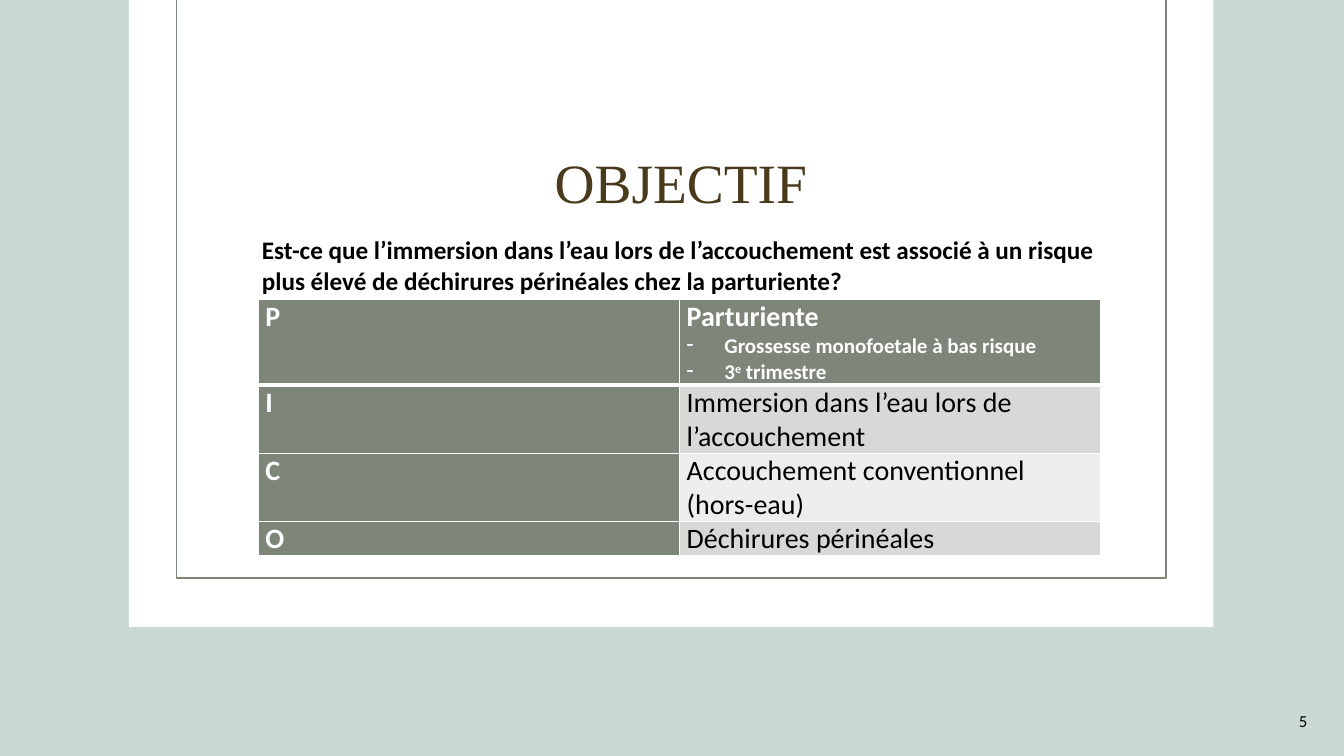
from lxml import etree
from pptx import Presentation
from pptx.dml.color import RGBColor
from pptx.enum.shapes import MSO_SHAPE
from pptx.enum.text import MSO_ANCHOR, PP_ALIGN
from pptx.oxml.ns import qn
from pptx.util import Cm, Pt

RECT = MSO_SHAPE.RECTANGLE
TOP, MIDDLE = MSO_ANCHOR.TOP, MSO_ANCHOR.MIDDLE
LEFT, CENTER, RIGHT = PP_ALIGN.LEFT, PP_ALIGN.CENTER, PP_ALIGN.RIGHT

COLORS = {
    "background": "CAD8D6",
    "white": "FFFFFF",
    "sage": "7E8679",
    "brown": "4A3A1C",
    "black": "000000",
    "band_dark": "D8D9D7",
    "band_light": "ECEDEC",
}


class SlideBuilder:
    """Holds the style and the current slide."""

    def __init__(self, prs, font="Calibri"):
        self.font = font
        self.s = prs.slides.add_slide(prs.slide_layouts[6])
        fill = self.s.background.fill
        fill.solid()
        fill.fore_color.rgb = self.rgb("background")

    def rgb(self, name):
        return RGBColor.from_string(COLORS[name])

    def style(self, p, size, color, bold=False, font=None):
        p.font.name = font or self.font
        p.font.size = Pt(size)
        p.font.bold = bold
        p.font.color.rgb = self.rgb(color)

    def rect(self, box, fill=None, line=None):
        sp = self.s.shapes.add_shape(RECT, *map(Cm, box))
        sp.shadow.inherit = False
        if fill:
            sp.fill.solid()
            sp.fill.fore_color.rgb = self.rgb(fill)
        else:
            sp.fill.background()
        if line:
            sp.line.color.rgb = self.rgb(line)
            sp.line.width = Pt(1)
        else:
            sp.line.fill.background()

    def text(self, box, text, size, color, align=LEFT, anchor=TOP,
             spacing=1.0, **look):
        tf = self.s.shapes.add_textbox(*map(Cm, box)).text_frame
        tf.word_wrap = True
        tf.vertical_anchor = anchor
        p = tf.paragraphs[0]
        p.text = text
        p.alignment = align
        p.line_spacing = spacing
        self.style(p, size, color, **look)

    def table(self, box, rows, heights):
        tbl = self.s.shapes.add_table(len(rows), 2, *map(Cm, box)).table
        tbl.first_row = tbl.horz_banding = False
        for row, height in zip(tbl.rows, heights):
            row.height = Cm(height)
        for i, (letter, text, fill) in enumerate(rows):
            head = i == 0
            self.cell(tbl.cell(i, 0), letter, "sage", True, i)
            self.cell(tbl.cell(i, 1), text, fill, head, i)
        return tbl

    def cell(self, cell, text, fill, bold, row):
        cell.margin_left = cell.margin_right = Cm(0.18)
        cell.margin_top = cell.margin_bottom = 0
        cell.fill.solid()
        cell.fill.fore_color.rgb = self.rgb(fill)
        p = cell.text_frame.paragraphs[0]
        p.text = text
        self.style(p, 20, "white" if bold else "black", bold)
        # A thicker rule separates the first row from the others
        widths = {"L": 1, "R": 1, "T": 3 if row == 1 else 1,
                  "B": 3 if row == 0 else 1}
        tcPr = cell._tc.get_or_add_tcPr()
        for pos, (side, width) in enumerate(widths.items()):
            ln = etree.Element(qn(f"a:ln{side}"), w=str(Pt(width)))
            solid = etree.SubElement(ln, qn("a:solidFill"))
            etree.SubElement(solid, qn("a:srgbClr"), val=COLORS["white"])
            tcPr.insert(pos, ln)

    def dash_item(self, cell, parts):
        p = cell.text_frame.add_paragraph()
        self.style(p, 15, "white", True)
        pPr = p._p.get_or_add_pPr()
        pPr.set("marL", str(Cm(0.95)))
        pPr.set("indent", str(-Cm(0.95)))
        bullet = etree.Element(qn("a:buChar"), char="-")
        pPr.insert(0, bullet)
        for text, baseline in parts:
            r = p.add_run()
            r.text = text
            if baseline:
                r._r.get_or_add_rPr().set("baseline", str(baseline * 1000))


def main():
    prs = Presentation()
    prs.slide_width, prs.slide_height = Cm(33.87), Cm(19.05)
    slide = SlideBuilder(prs)

    # White panel and its frame
    slide.rect((3.25, 0, 27.33, 15.8), fill="white")
    slide.rect((4.45, -0.03, 24.94, 14.6), line="sage")

    # Title, question and slide number
    slide.text((7.42, 3.99, 19.48, 1.35), "OBJECTIF", 39.6, "brown",
               CENTER, MIDDLE, 0.9, font="Times New Roman")
    slide.text((6.35, 5.79, 21.51, 8.13),
               "Est-ce que l’immersion dans l’eau lors de l’accouchement est "
               "associé à un risque plus élevé de déchirures périnéales chez "
               "la parturiente?", 18, "black", bold=True)
    slide.text((25.58, 17.65, 7.62, 1.02), "5", 12, "black", RIGHT, MIDDLE)

    # PICO table
    rows = [
        ("P", "Parturiente", "sage"),
        ("I", "Immersion dans l’eau lors de l’accouchement", "band_dark"),
        ("C", "Accouchement conventionnel (hors-eau)", "band_light"),
        ("O", "Déchirures périnéales", "band_dark"),
    ]
    heights = [2.16, 1.72, 1.72, 0.85]
    tbl = slide.table((6.51, 7.55, 21.23, sum(heights)), rows, heights)
    for parts in ([("Grossesse monofoetale à bas risque", 0)],
                  [("3", 0), ("e", 30), (" trimestre", 0)]):
        slide.dash_item(tbl.cell(0, 1), parts)

    prs.save("out.pptx")


if __name__ == "__main__":
    main()
